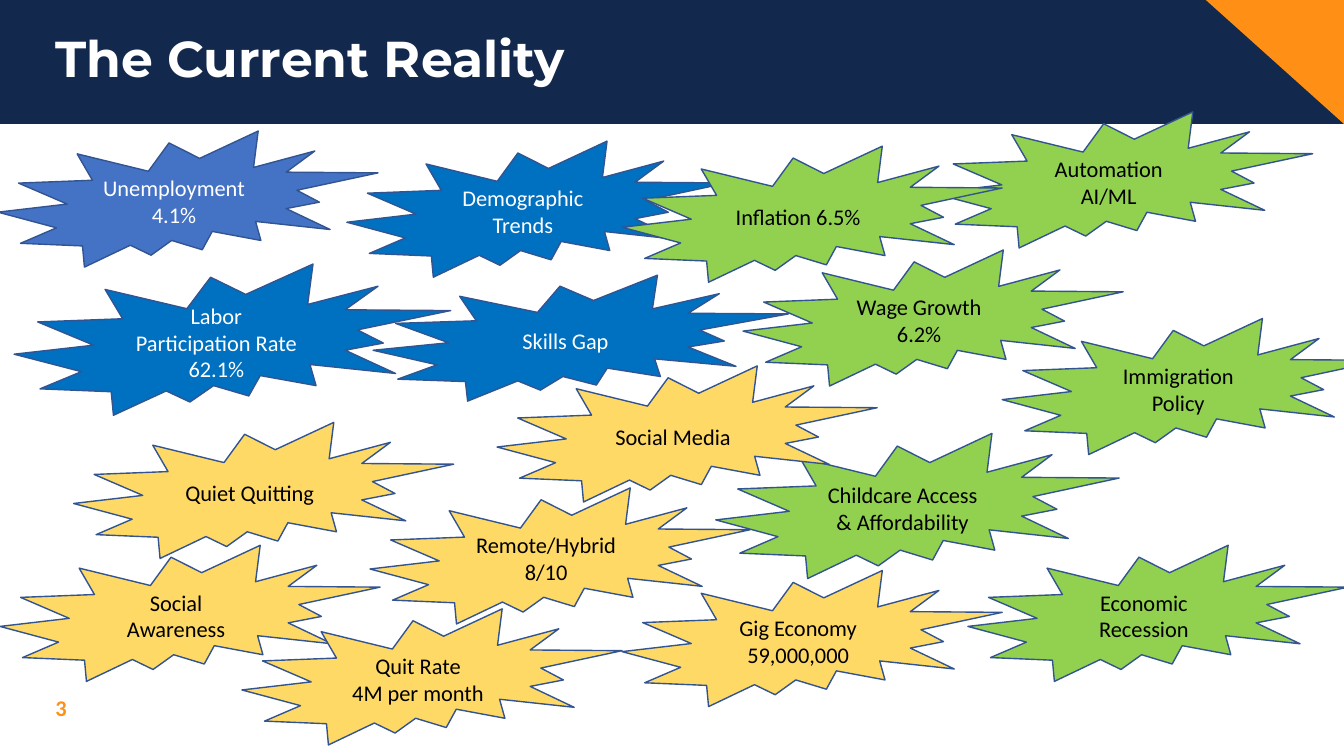
from pptx import Presentation
from pptx.dml.color import RGBColor
from pptx.enum.shapes import MSO_SHAPE as Shape
from pptx.enum.text import MSO_ANCHOR as Anchor, PP_ALIGN as Align
from pptx.util import Inches, Pt

NAVY, ORANGE, OUTLINE = "12284C", "FF9015", "325491"
WHITE, BLACK = "FFFFFF", "000000"
INDIGO, BLUE, GREEN, YELLOW = "4472C4", "0070C0", "92D050", "FFD966"
BURST_SIZE = (3.77, 1.35)

BURSTS = [
    ("Unemployment 4.1%", INDIGO, -0.02, 1.3, BURST_SIZE),
    ("Social Awareness", YELLOW, 0, 5.41, BURST_SIZE),
    ("Automation AI/ML", GREEN, 9.25, 1.11, BURST_SIZE),
    ("Quit Rate\n4M per month", YELLOW, 2.4, 6.04, BURST_SIZE),
    ("Immigration Policy", GREEN, 9.94, 3.16, BURST_SIZE),
    ("Labor Participation Rate 62.1%", BLUE, 0.14, 2.62, (4.33, 1.5)),
    ("Demographic Trends", BLUE, 3.44, 1.4, BURST_SIZE),
    ("Childcare Access & Affordability", GREEN, 7.1, 4.3, (4, 1.44)),
    ("Inflation 6.5%", GREEN, 6.17, 1.45, BURST_SIZE),
    ("Gig Economy 59,000,000", YELLOW, 6.17, 5.66, BURST_SIZE),
    ("Remote/Hybrid 8/10", YELLOW, 3.67, 4.84, BURST_SIZE),
    ("Economic Recession", GREEN, 9.6, 5.41, BURST_SIZE),
    ("Quiet Quitting", YELLOW, 0.73, 4.19, BURST_SIZE),
    ("Wage Growth 6.2%", GREEN, 7.37, 2.48, BURST_SIZE),
    ("Skills Gap", BLUE, 3.7, 2.73, (4.12, 1.25)),
    ("Social Media", YELLOW, 4.93, 3.63, BURST_SIZE),
]


def paint(target, color):
    if hasattr(target, "solid"):
        target.solid()
        target = target.fore_color
    target.rgb = RGBColor.from_string(color)


def write(holder, text, size, color, font="Calibri", bold=False, align=Align.LEFT):
    frame = holder.text_frame
    frame.word_wrap = True
    frame.vertical_anchor = Anchor.MIDDLE
    frame.text = text
    for paragraph in frame.paragraphs:
        paragraph.alignment = align
        for run in paragraph.runs:
            run.font.name = font
            run.font.size = Pt(size)
            run.font.bold = bold
            paint(run.font.color, color)


def add_block(slide, preset, left, top, width, height, fill):
    block = slide.shapes.add_shape(
        preset, Inches(left), Inches(top), Inches(width), Inches(height))
    block.shadow.inherit = False
    paint(block.fill, fill)
    block.line.fill.background()
    return block


def add_label(slide, left, top, width, height, text, size, color, font="Calibri"):
    label = slide.shapes.add_textbox(
        Inches(left), Inches(top), Inches(width), Inches(height))
    write(label, text, size, color, font, bold=True)
    return label


def add_burst(slide, text, fill, left, top, size):
    burst = add_block(slide, Shape.EXPLOSION2, left, top, *size, fill)
    paint(burst.line.fill, OUTLINE)
    burst.line.width = Pt(1)
    text_color = WHITE if fill in (INDIGO, BLUE) else BLACK
    write(burst, text, 16, text_color, align=Align.CENTER)


def main():
    deck = Presentation()
    deck.slide_width, deck.slide_height = Inches(13.33), Inches(7.5)
    slide = deck.slides.add_slide(deck.slide_layouts[6])

    add_block(slide, Shape.RECTANGLE, 0, 0, 13.33, 1.23, NAVY)
    corner = add_block(slide, Shape.RIGHT_TRIANGLE, 11.96, 0, 1.37, 1.23, ORANGE)
    corner.rotation = 180
    title = add_label(slide, 0.45, 0.11, 11.5, 1, "The Current Reality",
                      36, WHITE, "Montserrat")
    title.text_frame.paragraphs[0].line_spacing = 0.9
    add_label(slide, 0.45, 6.82, 3, 0.4, "3", 16, ORANGE)

    for burst in BURSTS:
        add_burst(slide, *burst)
    deck.save("out.pptx")


if __name__ == "__main__":
    main()
